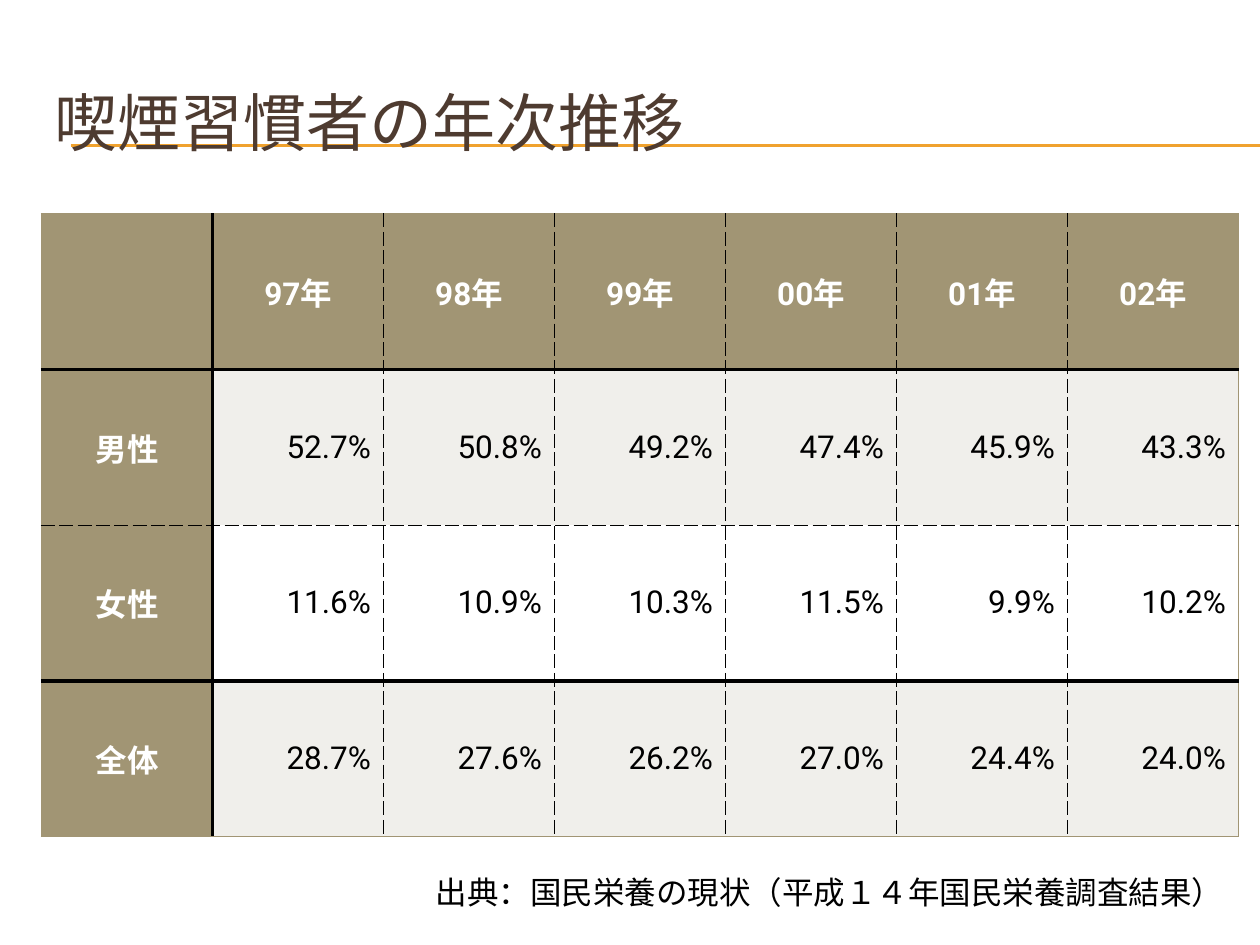
import pptx
import pptx.dml.color
import pptx.enum.shapes
import pptx.enum.text
import pptx.oxml
import pptx.oxml.ns
import pptx.util
from pptx.util import Inches

BLACK = pptx.dml.color.RGBColor(0x00, 0x00, 0x00)
WHITE = pptx.dml.color.RGBColor(0xFF, 0xFF, 0xFF)
TAN = pptx.dml.color.RGBColor(0xA1, 0x95, 0x74)
PALE = pptx.dml.color.RGBColor(0xF0, 0xEF, 0xEB)
BROWN = pptx.dml.color.RGBColor(0x4E, 0x3B, 0x30)
ORANGE = pptx.dml.color.RGBColor(0xF0, 0xA2, 0x2E)

ALIGN = pptx.enum.text.PP_ALIGN
MIDDLE = pptx.enum.text.MSO_ANCHOR.MIDDLE
NAMESPACE = pptx.oxml.ns.nsdecls("a")

OUTER = (TAN, 1, "solid")
THICK = (BLACK, 2.25, "solid")
DASHED = (BLACK, 1, "dash")
COLUMN_EDGES = [OUTER, THICK] + [DASHED] * 5 + [OUTER]
ROW_EDGES = [OUTER, THICK, DASHED, THICK, OUTER]

ROWS = [
    ["", "97年", "98年", "99年", "00年", "01年", "02年"],
    ["男性", "52.7%", "50.8%", "49.2%", "47.4%", "45.9%", "43.3%"],
    ["女性", "11.6%", "10.9%", "10.3%", "11.5%", "9.9%", "10.2%"],
    ["全体", "28.7%", "27.6%", "26.2%", "27.0%", "24.4%", "24.0%"],
]


def write_text(text_frame, text, size, color, bold, alignment):
    paragraph = text_frame.paragraphs[0]
    paragraph.alignment = alignment
    run = paragraph.add_run()
    run.text = text
    run.font.color.rgb = color
    values = {"name": "Roboto", "size": pptx.util.Pt(size), "bold": bold}
    for name, value in values.items():
        setattr(run.font, name, value)


def set_borders(cell, edges):
    properties = cell._tc.get_or_add_tcPr()
    for position, (side, (color, width, dash)) in enumerate(edges.items()):
        border = pptx.oxml.parse_xml(
            f'<a:ln{side} {NAMESPACE} w="{pptx.util.Pt(width)}">'
            f'<a:solidFill><a:srgbClr val="{color}"/></a:solidFill>'
            f'<a:prstDash val="{dash}"/></a:ln{side}>'
        )
        properties.insert(position, border)


presentation = pptx.Presentation()
presentation.slide_width = Inches(10)
presentation.slide_height = Inches(7.5)
slide = presentation.slides.add_slide(presentation.slide_layouts[5])

title = slide.shapes.title
title_box = {"left": 0.33, "top": 0.5, "width": 9.5, "height": 0.92}
for name, value in title_box.items():
    setattr(title, name, Inches(value))
title.text_frame.vertical_anchor = MIDDLE
title.text_frame.auto_size = pptx.enum.text.MSO_AUTO_SIZE.NONE
write_text(title.text_frame, "喫煙習慣者の年次推移", 36, BROWN, False, ALIGN.LEFT)

for top in (1.15, 1.16):
    rule = slide.shapes.add_connector(
        pptx.enum.shapes.MSO_CONNECTOR.STRAIGHT,
        Inches(0.56), Inches(top), Inches(10), Inches(top),
    )
    rule.line.color.rgb = ORANGE
    rule.line.width = pptx.util.Pt(0.75)
    rule.element.spPr.append(pptx.oxml.parse_xml(f"<a:effectLst {NAMESPACE}/>"))
    title.element.addprevious(rule.element)

table = slide.shapes.add_table(
    len(ROWS), len(ROWS[0]), Inches(0.33), Inches(1.7), Inches(9.5), Inches(4.94)
).table
for row, texts in enumerate(ROWS):
    for column, text in enumerate(texts):
        cell = table.cell(row, column)
        is_header = row == 0 or column == 0
        cell.vertical_anchor = MIDDLE
        cell.fill.solid()
        cell.fill.fore_color.rgb = TAN if is_header else PALE if row % 2 else WHITE
        set_borders(cell, {
            "L": COLUMN_EDGES[column],
            "R": COLUMN_EDGES[column + 1],
            "T": ROW_EDGES[row],
            "B": ROW_EDGES[row + 1],
        })
        if text:
            write_text(
                cell.text_frame, text, 18,
                WHITE if is_header else BLACK,
                is_header,
                ALIGN.CENTER if is_header else ALIGN.RIGHT,
            )

source = slide.shapes.add_textbox(Inches(3.36), Inches(6.88), Inches(6.48), Inches(0.4))
source.text_frame.word_wrap = True
source.text_frame.auto_size = pptx.enum.text.MSO_AUTO_SIZE.SHAPE_TO_FIT_TEXT
write_text(
    source.text_frame, "出典：国民栄養の現状（平成１４年国民栄養調査結果）",
    18, BLACK, False, ALIGN.LEFT,
)

presentation.save("out.pptx")
